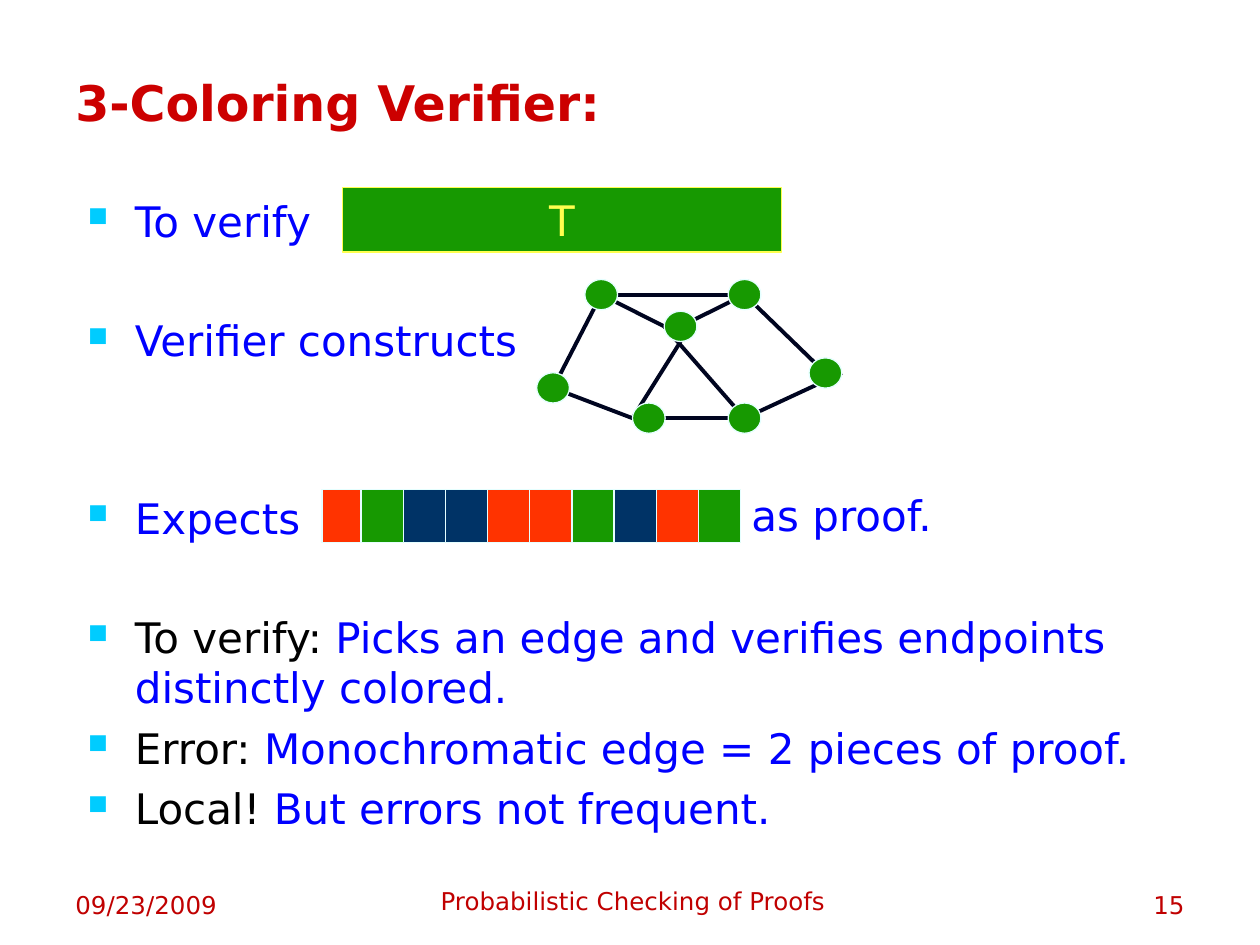
from lxml import etree
from pptx import Presentation
from pptx.dml.color import RGBColor
from pptx.enum.shapes import MSO_CONNECTOR, MSO_SHAPE
from pptx.enum.text import MSO_ANCHOR, PP_ALIGN
from pptx.oxml.ns import qn
from pptx.util import Cm, Pt

STRAIGHT = MSO_CONNECTOR.STRAIGHT
RECTANGLE, OVAL = MSO_SHAPE.RECTANGLE, MSO_SHAPE.OVAL
TOP, MIDDLE, BOTTOM = MSO_ANCHOR.TOP, MSO_ANCHOR.MIDDLE, MSO_ANCHOR.BOTTOM
LEFT, CENTER, RIGHT = PP_ALIGN.LEFT, PP_ALIGN.CENTER, PP_ALIGN.RIGHT

FONT = "DejaVu Sans"
COLORS = {
    "title": "CC0000", "footer": "C00000", "blue": "0000FF", "black": "000000",
    "bullet": "00CCFF", "green": "179901", "yellow": "FFFF4F", "red": "FF3300",
    "navy": "003366", "edge": "000520", "outline": "E5FFFF",
}

BULLETS = [
    (0, [("To verify", "blue")]),
    (39.4, [("Verifier constructs", "blue")]),
    (72.7, [("Expects", "blue")]),
    (39.4, [("To verify: ", "black"),
            ("Picks an edge and verifies endpoints distinctly colored.", "blue")]),
    (5.7, [("Error: ", "black"), ("Monochromatic edge = 2 pieces of proof.", "blue")]),
    (5.7, [("Local! ", "black"), ("But errors not frequent.", "blue")]),
]

NODE_WIDTH, NODE_HEIGHT = 0.66, 0.61
NODES = {
    "lower right": (15.01, 8.43), "upper left": (12.12, 5.94), "left": (11.15, 7.82),
    "lower left": (13.08, 8.43), "middle": (13.72, 6.58), "upper right": (15.01, 5.94),
    "right": (16.64, 7.52),
}
SIDES = {"center": (0, 0), "left": (-0.5, 0), "right": (0.5, 0), "bottom": (0, 0.5)}
EDGES = [
    ("upper right", "center", "right", "center"),
    ("lower right", "center", "right", "right"),
    ("middle", "left", "lower right", "center"),
    ("lower left", "left", "lower right", "center"),
    ("middle", "bottom", "lower left", "left"),
    ("left", "center", "lower left", "left"),
    ("left", "center", "upper left", "center"),
    ("upper left", "center", "upper right", "center"),
    ("middle", "center", "upper right", "center"),
    ("middle", "left", "upper left", "center"),
]

PROOF_COLORS = ["red", "green", "navy", "navy", "red", "red", "green", "navy", "red", "green"]
CELL_WIDTH, CELL_HEIGHT = 0.85, 1.07
FIRST_CELL_LEFT, SECOND_CELL_LEFT, CELL_TOP = 6.49, 7.28, 9.87


def color(name):
    """Return the named colour."""
    return RGBColor.from_string(COLORS[name])


def style_font(font, size, color_name=None, bold=False):
    """Set typeface, size, weight and an optional colour."""
    font.name, font.size, font.bold = FONT, Pt(size), bold
    if color_name:
        font.color.rgb = color(color_name)


def add_text_box(slide, box, anchor):
    """Add an empty wrapping text box and return its text frame."""
    frame = slide.shapes.add_textbox(*map(Cm, box)).text_frame
    frame.word_wrap, frame.vertical_anchor = True, anchor
    return frame


def add_label(slide, text, box, size, color_name, anchor=BOTTOM, align=LEFT, bold=False):
    """Add a text box that holds one paragraph."""
    paragraph = add_text_box(slide, box, anchor).paragraphs[0]
    paragraph.text, paragraph.alignment = text, align
    style_font(paragraph.font, size, color_name, bold)


def set_bullet(paragraph):
    """Give a paragraph a small square bullet and a hanging indent."""
    properties = paragraph._p.get_or_add_pPr()
    properties.set("marL", str(Cm(0.95)))
    properties.set("indent", str(Cm(-0.95)))
    bullet_color = etree.SubElement(properties, qn("a:buClr"))
    etree.SubElement(bullet_color, qn("a:srgbClr"), val=COLORS["bullet"])
    etree.SubElement(properties, qn("a:buSzPct"), val="65000")
    etree.SubElement(properties, qn("a:buChar"), char="■")


def add_bullets(slide):
    """Add the bulleted steps of the verifier."""
    frame = add_text_box(slide, (1.52, 3.81, 22.86, 13.94), TOP)
    for index, (space, runs) in enumerate(BULLETS):
        paragraph = frame.add_paragraph() if index else frame.paragraphs[0]
        paragraph.space_before = Pt(space)
        set_bullet(paragraph)
        style_font(paragraph.font, 24, runs[0][1] if len(runs) == 1 else None)
        for text, color_name in runs:
            run = paragraph.add_run()
            run.text = text
            if len(runs) > 1:
                run.font.color.rgb = color(color_name)


def add_filled_shape(shapes, kind, box, fill, line="outline"):
    """Add a filled preset shape with a thin outline."""
    shape = shapes.add_shape(kind, *map(Cm, box))
    shape.shadow.inherit = False
    shape.fill.solid()
    shape.fill.fore_color.rgb = color(fill)
    shape.line.color.rgb = color(line)
    shape.line.width = Pt(0.75)
    return shape


def add_theorem(slide):
    """Add the bar that stands for the theorem."""
    shape = add_filled_shape(slide.shapes, RECTANGLE, (6.91, 3.78, 8.84, 1.3), "green", "yellow")
    frame = shape.text_frame
    frame.word_wrap, frame.vertical_anchor = False, MIDDLE
    paragraph = frame.paragraphs[0]
    paragraph.text, paragraph.alignment = "T", CENTER
    style_font(paragraph.font, 24, "yellow")


def node_point(node, side):
    """Return the place of a node's centre or side."""
    (x, y), (across, down) = NODES[node], SIDES[side]
    return Cm(x + across * NODE_WIDTH), Cm(y + down * NODE_HEIGHT)


def add_graph(slide):
    """Add the graph with its edges behind its nodes."""
    shapes = slide.shapes.add_group_shape().shapes
    for start, start_side, end, end_side in EDGES:
        connector = shapes.add_connector(
            STRAIGHT, *node_point(start, start_side), *node_point(end, end_side))
        connector.line.color.rgb = color("edge")
        connector.line.width = Pt(2.25)
        etree.SubElement(connector._element.spPr, qn("a:effectLst"))
    for x, y in NODES.values():
        box = (x - NODE_WIDTH / 2, y - NODE_HEIGHT / 2, NODE_WIDTH, NODE_HEIGHT)
        add_filled_shape(shapes, OVAL, box, "green")


def add_proof(slide):
    """Add the row of coloured proof cells."""
    shapes = slide.shapes.add_group_shape().shapes
    for index, fill in enumerate(PROOF_COLORS):
        left = SECOND_CELL_LEFT + (index - 1) * CELL_WIDTH if index else FIRST_CELL_LEFT
        add_filled_shape(shapes, RECTANGLE, (left, CELL_TOP, CELL_WIDTH, CELL_HEIGHT), fill)


def main():
    """Build and save the slide."""
    presentation = Presentation()
    presentation.slide_width, presentation.slide_height = Cm(25.4), Cm(19.05)
    slide = presentation.slides.add_slide(presentation.slide_layouts[6])
    add_bullets(slide)
    add_label(slide, "as proof.", (14.9, 9.88, 5, 1), 24, "blue", MIDDLE)
    add_label(slide, "3-Coloring Verifier:", (1.27, 1.07, 22.86, 1.7), 28, "title", bold=True)
    add_theorem(slide)
    add_graph(slide)
    add_proof(slide)
    add_label(slide, "09/23/2009", (1.27, 17.35, 5.92, 1.32), 14, "footer")
    add_label(slide, "15", (18.21, 17.35, 5.92, 1.32), 14, "footer", align=RIGHT)
    add_label(slide, "Probabilistic Checking of Proofs", (7.72, 17.25, 10.08, 1.32), 14,
              "footer", align=CENTER)
    presentation.save("out.pptx")


if __name__ == "__main__":
    main()
